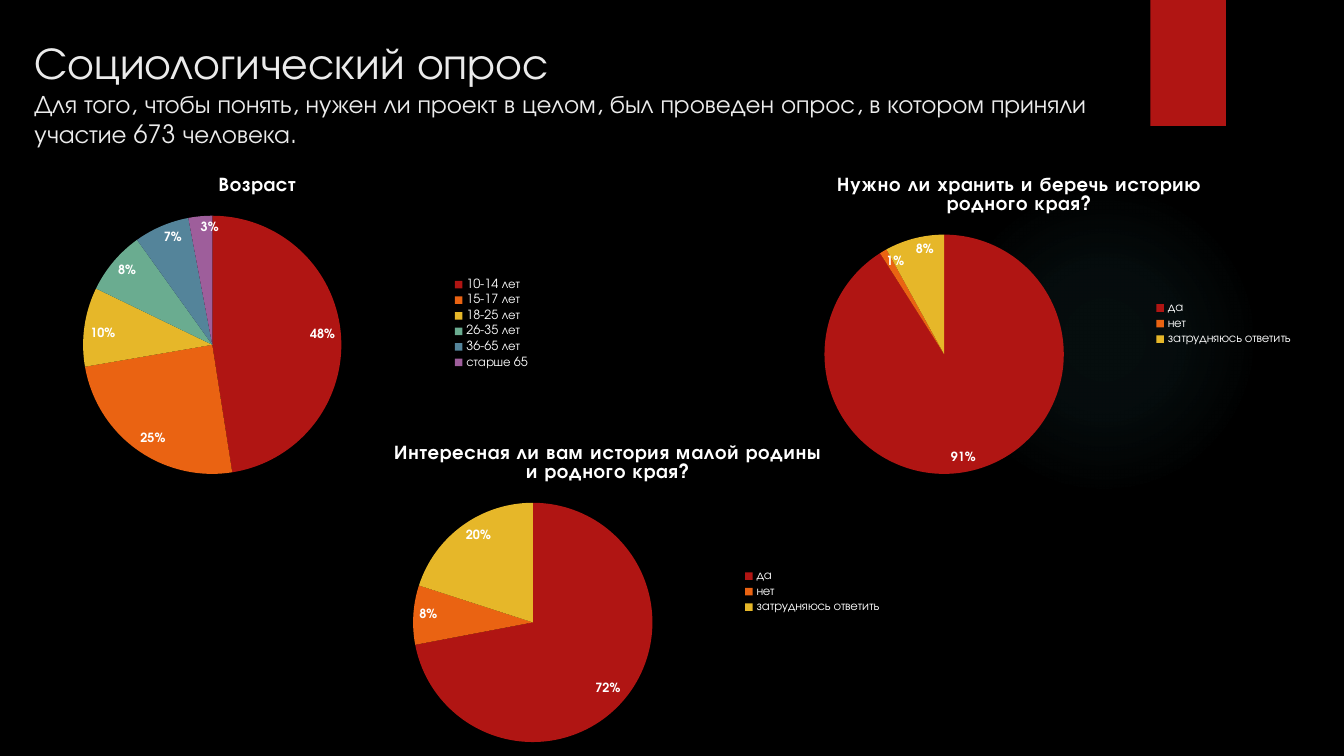
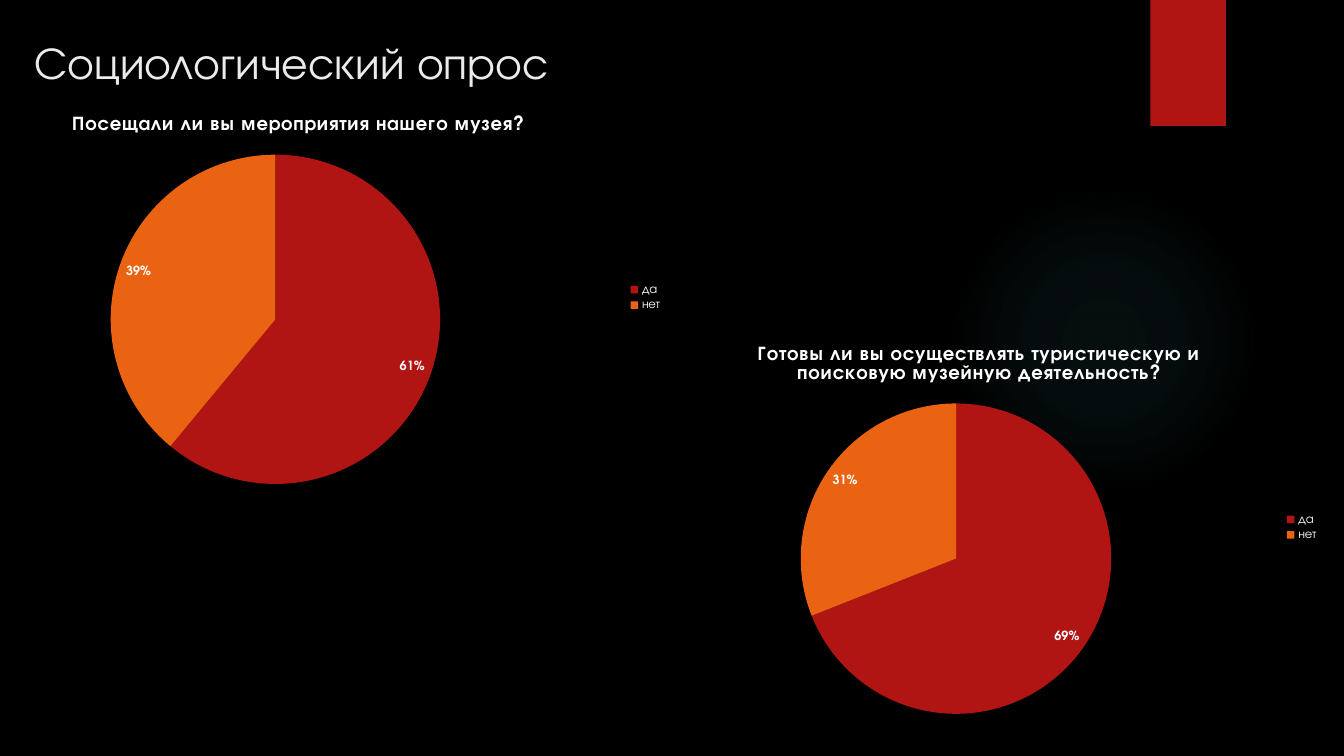
import pptx
import pptx.chart.data
import pptx.dml.color
import pptx.enum.chart
import pptx.enum.shapes
import pptx.enum.text
import pptx.oxml
import pptx.oxml.ns
import pptx.util

Inches = pptx.util.Inches
Pt = pptx.util.Pt

FONT = "TeX Gyre Adventor"
BLACK = "000000"
WHITE = "FFFFFF"
TITLE_COLOR = "EBEBEB"
BAND_COLOR = "B01513"
GLOW_COLOR = "50B9C1"
GLOW_STOPS = [(0, 7), (36, 6), (69, 0)]
SLICE_COLORS = ["B01513", "EA6312", "E6B729", "6AAC90", "54849A", "9E5E9B"]

HEADING = "Социологический опрос"
AGES = ["10-14 лет", "15-17 лет", "18-25 лет", "26-35 лет", "36-65 лет", "старше 65"]
YES_NO = ["да", "нет"]
YES_NO_UNSURE = YES_NO + ["затрудняюсь ответить"]


def rgb(value):
    return pptx.dml.color.RGBColor.from_string(value)


def style_font(font, size, color=WHITE, bold=False):
    font.name = FONT
    font.size = Pt(size)
    font.bold = bold
    font.color.rgb = rgb(color)


class SurveyDeck:
    def __init__(self):
        self.presentation = pptx.Presentation()
        self.presentation.slide_width = Inches(13.33)
        self.presentation.slide_height = Inches(7.5)
        self.layout = self.presentation.slide_layouts[5]
        self.slide = None

    def new_slide(self):
        self.slide = self.presentation.slides.add_slide(self.layout)

    def decorate_layout(self):
        self.layout.background.fill.solid()
        self.layout.background.fill.fore_color.rgb = rgb(BLACK)
        for placeholder in list(self.layout.placeholders):
            if placeholder.placeholder_format.idx:
                placeholder.element.getparent().remove(placeholder.element)
        shapes = pptx.enum.shapes.MSO_SHAPE
        glow = self.shape(shapes.OVAL, 9.41, 1.83, 3.08, 3.08, GLOW_COLOR)
        self.fade(glow)
        band = self.shape(shapes.RECTANGLE, 11.41, 0, 0.75, 1.25, BAND_COLOR)
        for position, decoration in enumerate([glow, band], start=2):
            self.layout.shapes.element.insert(position, decoration.element)

    def shape(self, preset, left, top, width, height, color):
        shape = self.slide.shapes.add_shape(
            preset, Inches(left), Inches(top), Inches(width), Inches(height))
        shape.shadow.inherit = False
        shape.fill.solid()
        shape.fill.fore_color.rgb = rgb(color)
        shape.line.fill.background()
        return shape

    def fade(self, shape):
        stops = "".join(
            f'<a:gs pos="{position * 1000}"><a:srgbClr val="{GLOW_COLOR}">'
            f'<a:alpha val="{alpha * 1000}"/></a:srgbClr></a:gs>'
            for position, alpha in GLOW_STOPS)
        gradient = pptx.oxml.parse_xml(
            f'<a:gradFill {pptx.oxml.ns.nsdecls("a")}><a:gsLst>{stops}</a:gsLst>'
            '<a:path path="circle"><a:fillToRect l="50000" t="50000" r="50000" b="50000"/>'
            '</a:path></a:gradFill>')
        solid = shape.element.spPr.find(pptx.oxml.ns.qn("a:solidFill"))
        solid.getparent().replace(solid, gradient)

    def title(self, heading, subtitle=None):
        title = self.slide.shapes.title
        title.left, title.top = Inches(0.24), Inches(0.29)
        title.width, title.height = Inches(11.16), Inches(1.74)
        frame = title.text_frame
        frame.text = f"{heading}\v{subtitle}" if subtitle else heading
        frame.word_wrap = True
        frame.auto_size = pptx.enum.text.MSO_AUTO_SIZE.NONE
        frame.vertical_anchor = pptx.enum.text.MSO_ANCHOR.TOP
        paragraph = frame.paragraphs[0]
        paragraph.alignment = pptx.enum.text.PP_ALIGN.LEFT
        for run, size in zip(paragraph.runs, [32, 18]):
            style_font(run.font, size, TITLE_COLOR)

    def pie(self, question, answers, shares, left, top, width=5.62, height=3.26):
        data = pptx.chart.data.CategoryChartData()
        data.categories = answers
        data.add_series(question, shares)
        chart = self.slide.shapes.add_chart(
            pptx.enum.chart.XL_CHART_TYPE.PIE, Inches(left), Inches(top),
            Inches(width), Inches(height), data).chart
        style_font(chart.font, 10)

        chart.has_title = True
        chart.chart_title.text_frame.text = question
        heading = chart.chart_title.text_frame.paragraphs[0].runs[0]
        style_font(heading.font, 14, bold=True)
        heading._r.get_or_add_rPr().set("spc", "50")

        chart.has_legend = True
        chart.legend.position = pptx.enum.chart.XL_LEGEND_POSITION.RIGHT
        chart.legend.include_in_layout = False
        style_font(chart.legend.font, 9)

        plot = chart.plots[0]
        plot.vary_by_categories = True
        for index, color in enumerate(SLICE_COLORS[:len(shares)]):
            slice_format = plot.series[0].points[index].format
            slice_format.fill.solid()
            slice_format.fill.fore_color.rgb = rgb(color)
            slice_format.line.fill.background()

        plot.has_data_labels = True
        labels = plot.data_labels
        labels.show_percentage = True
        labels.show_value = False
        labels.number_format = "0%"
        labels.number_format_is_linked = False
        labels.position = pptx.enum.chart.XL_LABEL_POSITION.INSIDE_END
        style_font(labels.font, 9, bold=True)


def main():
    deck = SurveyDeck()
    deck.new_slide()
    deck.decorate_layout()
    deck.title(HEADING, "Для того, чтобы понять, нужен ли проект в целом, был проведен опрос, "
                        "в котором приняли участие 673 человека.")
    deck.pie("Возраст", AGES, [48, 25, 10, 8, 7, 3], -0.26, 1.58)
    deck.pie("Нужно ли хранить и беречь историю родного края?",
             YES_NO_UNSURE, [91, 1, 8], 7.3, 1.58)
    deck.pie("Интересная ли вам история малой родины и родного края?",
             YES_NO_UNSURE, [72, 8, 20], 3.22, 4.24)

    deck.new_slide()
    deck.title(HEADING)
    deck.pie("Посещали ли вы мероприятия нашего музея?",
             YES_NO, [61, 39], -0.75, 0.96, 7.42, 3.98)
    deck.pie("Готовы ли вы осуществлять туристическую и поисковую музейную деятельность?",
             YES_NO, [69, 31], 6.24, 3.24, 6.94, 3.98)
    deck.presentation.save("out.pptx")


if __name__ == "__main__":
    main()
